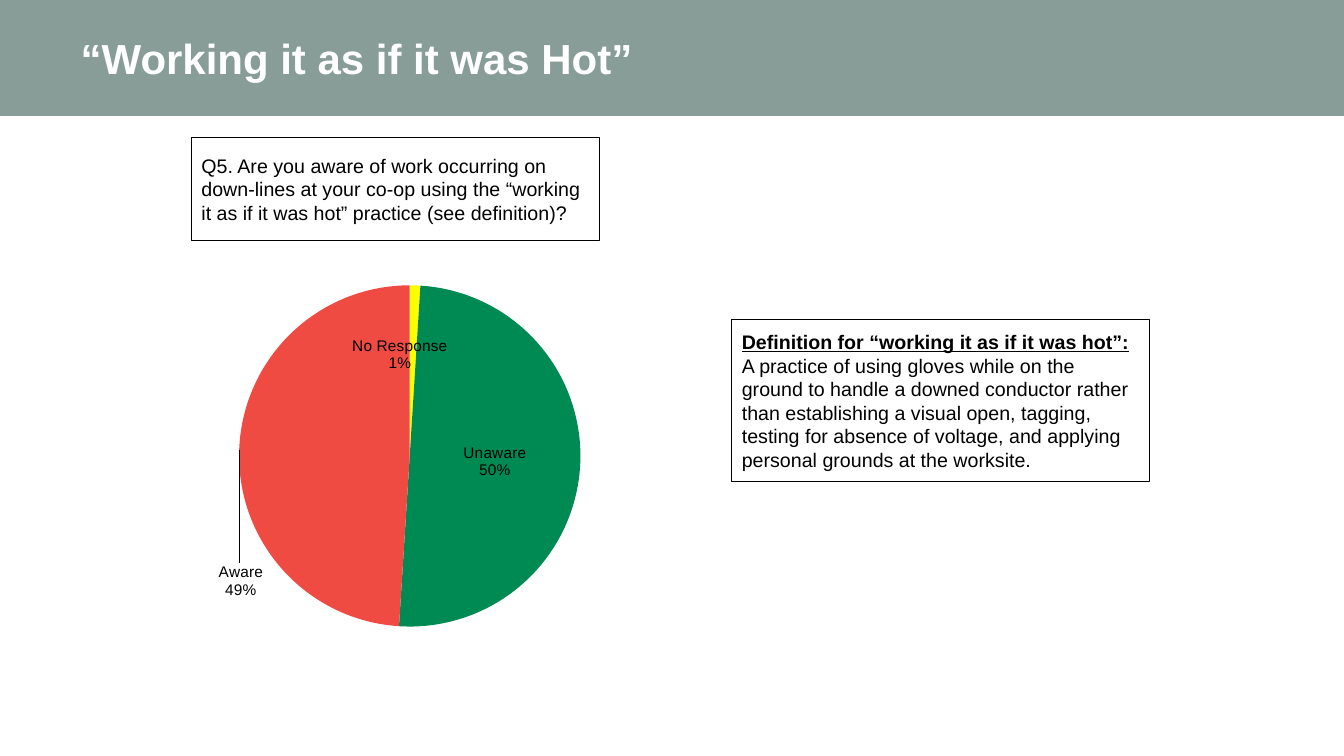
from copy import deepcopy
from dataclasses import dataclass

from lxml import etree
from pptx import Presentation
from pptx.chart.data import CategoryChartData
from pptx.dml.color import RGBColor
from pptx.enum.chart import XL_CHART_TYPE, XL_LABEL_POSITION
from pptx.enum.shapes import MSO_SHAPE
from pptx.enum.text import MSO_ANCHOR, MSO_AUTO_SIZE, PP_ALIGN
from pptx.oxml.ns import qn
from pptx.util import Inches, Pt

PIE = XL_CHART_TYPE.PIE
CENTER_LABEL = XL_LABEL_POSITION.CENTER
RECTANGLE = MSO_SHAPE.RECTANGLE
MIDDLE = MSO_ANCHOR.MIDDLE
NO_AUTOFIT = MSO_AUTO_SIZE.NONE
LEFT = PP_ALIGN.LEFT

SLIDE_WIDTH, SLIDE_HEIGHT = Inches(13.33), Inches(7.5)
TITLE_ONLY = 5


@dataclass(frozen=True)
class Theme:
    font: str = "Arial"
    title_size: float = 30
    body_size: float = 14
    label_size: float = 11
    outline_width: float = 0.75
    band: str = "889D98"
    paper: str = "FFFFFF"
    ink: str = "000000"
    slices: tuple = ("FFFF00", "008A53", "F04B43")


THEME = Theme()

# Places as percent of the slide: left, top, width, height
BAND = (0, 0, 100, 15.33)
TITLE = (5.25, 0, 90, 15.33)
QUESTION = (14.25, 18.13, 30.38, 13.73)
DEFINITION = (54.46, 42.27, 31.06, 21.47)
CHART = (14.03, 30.67, 31.06, 54.4)

# Places as shares of the chart
PIE_AREA = {"x": 0.12, "y": 0.13, "w": 0.82, "h": 0.83}
LABEL_SHIFTS = {0: (-0.03, -0.04), 2: (-0.2, 0.31)}

ANSWERS = {"No Response": 0.01, "Unaware": 0.5, "Aware": 0.49}


def place(box):
    left, top, width, height = box
    return (int(SLIDE_WIDTH * left / 100), int(SLIDE_HEIGHT * top / 100),
            int(SLIDE_WIDTH * width / 100), int(SLIDE_HEIGHT * height / 100))


def set_font(font, size, color, bold=False, underline=False):
    font.name = THEME.font
    font.size = Pt(size)
    font.color.rgb = RGBColor.from_string(color)
    font.bold = bold
    font.underline = underline


def add_rectangle(slide, box, fill, line=None):
    shape = slide.shapes.add_shape(RECTANGLE, *place(box))
    shape.shadow.inherit = False
    shape.fill.solid()
    shape.fill.fore_color.rgb = RGBColor.from_string(fill)
    if line:
        shape.line.color.rgb = RGBColor.from_string(line)
        shape.line.width = Pt(THEME.outline_width)
    else:
        shape.line.fill.background()
    return shape


def add_title(slide, text):
    # The band goes behind the title placeholder
    band = add_rectangle(slide, BAND, THEME.band)
    slide.shapes.title._element.addprevious(band._element)
    title = slide.shapes.title
    title.left, title.top, title.width, title.height = place(TITLE)
    frame = title.text_frame
    frame.auto_size = NO_AUTOFIT
    frame.vertical_anchor = MIDDLE
    frame.margin_bottom = 0
    paragraph = frame.paragraphs[0]
    paragraph.alignment = LEFT
    paragraph.line_spacing = 0.9
    run = paragraph.add_run()
    run.text = text
    set_font(run.font, THEME.title_size, THEME.paper, bold=True)


def add_text_panel(slide, box, text, heading=None):
    frame = add_rectangle(slide, box, THEME.paper, THEME.ink).text_frame
    frame.word_wrap = True
    frame.vertical_anchor = MIDDLE
    lines = [(heading, True), (text, False)] if heading else [(text, False)]
    for number, (line, is_heading) in enumerate(lines):
        paragraph = frame.add_paragraph() if number else frame.paragraphs[0]
        paragraph.alignment = LEFT
        run = paragraph.add_run()
        run.text = line
        set_font(run.font, THEME.body_size, THEME.ink, is_heading, is_heading)


def manual_layout(settings):
    layout = etree.Element(qn("c:layout"))
    manual = etree.SubElement(layout, qn("c:manualLayout"))
    for name, value in settings.items():
        etree.SubElement(manual, qn(f"c:{name}")).set("val", str(value))
    return layout


def place_pie(chart):
    plot_area = chart._chartSpace.find(".//" + qn("c:plotArea"))
    for layout in plot_area.findall(qn("c:layout")):
        plot_area.remove(layout)
    modes = {"layoutTarget": "inner", "xMode": "edge", "yMode": "edge"}
    plot_area.insert(0, manual_layout({**modes, **PIE_AREA}))


def add_labels(series):
    labels = series.data_labels
    labels.show_value = True
    labels.show_category_name = True
    labels.number_format = "0%"
    labels.number_format_is_linked = False
    labels.position = CENTER_LABEL
    set_font(labels.font, THEME.label_size, THEME.ink)

    # Category and value stand on separate lines
    element = series._element.find(qn("c:dLbls"))
    separator = etree.Element(qn("c:separator"))
    separator.text = "\n"
    element.find(qn("c:showBubbleSize")).addnext(separator)

    # Shifted labels share the settings of the series
    shared = [child for child in element if child.tag != qn("c:showLeaderLines")]
    for position, (index, (x, y)) in enumerate(LABEL_SHIFTS.items()):
        label = etree.Element(qn("c:dLbl"))
        etree.SubElement(label, qn("c:idx")).set("val", str(index))
        label.append(manual_layout({"x": x, "y": y}))
        label.extend(deepcopy(shared))
        element.insert(position, label)


def add_pie(slide, box, answers):
    data = CategoryChartData(number_format="0%")
    data.categories = list(answers)
    data.add_series("Series 1", list(answers.values()))
    chart = slide.shapes.add_chart(PIE, *place(box), data).chart
    chart.has_legend = False
    chart.has_title = False
    set_font(chart.font, THEME.label_size, THEME.ink)
    plot = chart.plots[0]
    plot.vary_by_categories = True
    series = plot.series[0]
    for index, color in enumerate(THEME.slices):
        point_format = series.points[index].format
        point_format.fill.solid()
        point_format.fill.fore_color.rgb = RGBColor.from_string(color)
        point_format.line.fill.background()
    add_labels(series)
    place_pie(chart)


def main():
    presentation = Presentation()
    presentation.slide_width, presentation.slide_height = SLIDE_WIDTH, SLIDE_HEIGHT
    slide = presentation.slides.add_slide(presentation.slide_layouts[TITLE_ONLY])

    add_title(slide, "“Working it as if it was Hot”")
    add_text_panel(
        slide, DEFINITION,
        "A practice of using gloves while on the ground to handle a downed "
        "conductor rather than establishing a visual open, tagging, testing for "
        "absence of voltage, and applying personal grounds at the worksite.",
        heading="Definition for “working it as if it was hot”:")
    add_pie(slide, CHART, ANSWERS)
    add_text_panel(
        slide, QUESTION,
        "Q5. Are you aware of work occurring on down-lines at your co-op using "
        "the “working it as if it was hot” practice (see definition)?")

    presentation.save("out.pptx")


if __name__ == "__main__":
    main()
